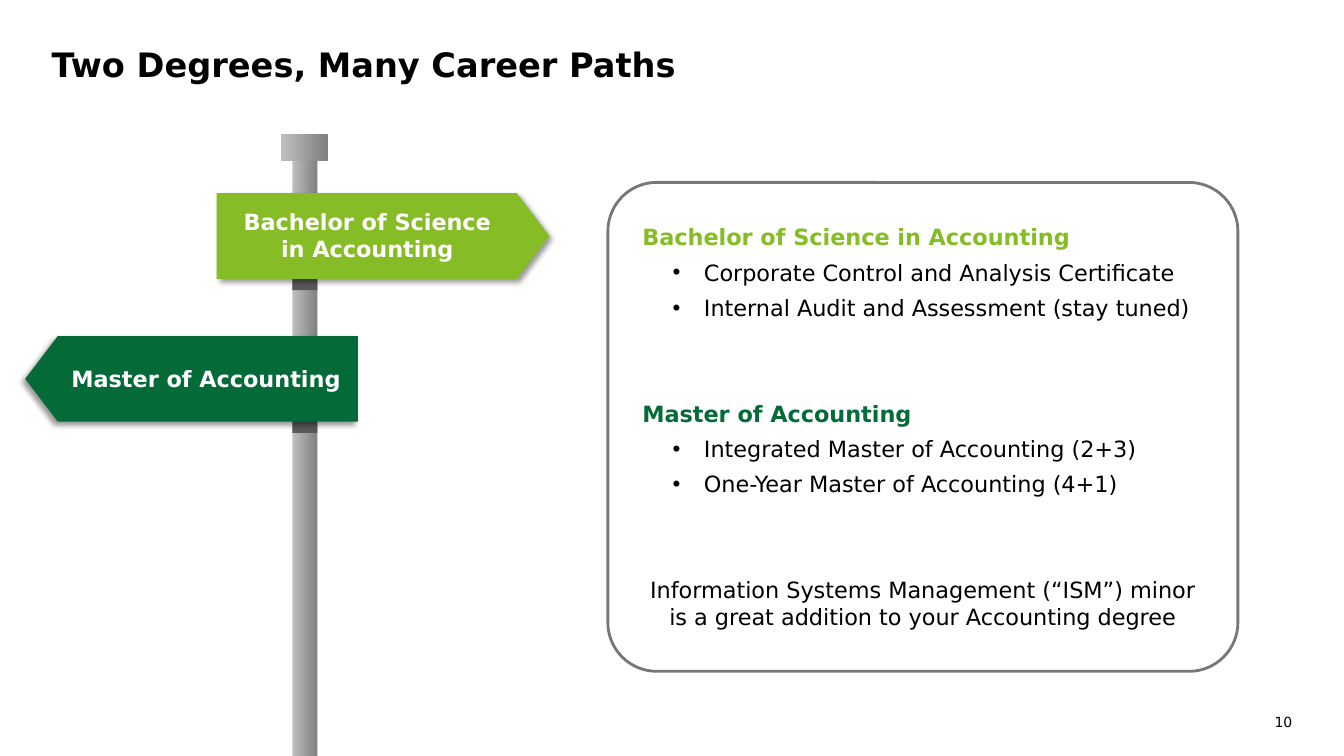
from lxml import etree
from pptx import Presentation
from pptx.dml.color import RGBColor
from pptx.enum import shapes, text
from pptx.oxml import ns
from pptx.util import Pt

FONT = "DejaVu Sans"
BLACK = RGBColor(0x00, 0x00, 0x00)
WHITE = RGBColor(0xFF, 0xFF, 0xFF)
LIME = RGBColor(0x86, 0xBC, 0x25)
GREEN = RGBColor(0x04, 0x6A, 0x38)
SILVER = RGBColor(0xBF, 0xBF, 0xBF)
STEEL = RGBColor(0x80, 0x80, 0x80)
DARK = RGBColor(0x59, 0x59, 0x59)
FRAME = RGBColor(0x75, 0x78, 0x7B)

KIND = shapes.MSO_SHAPE
ALIGN = text.PP_ALIGN

POST_X, POST_W, POST_TOP = 208.8, 18, 95.8
SIGN_W, SIGN_H = 237.6, 61.2
PAGE_H = 540

# Degree, colour, programmes
DEGREES = [
    ("Bachelor of Science in Accounting", LIME,
     ["Corporate Control and Analysis Certificate",
      "Internal Audit and Assessment (stay tuned)"]),
    ("Master of Accounting", GREEN,
     ["Integrated Master of Accounting (2+3)",
      "One-Year Master of Accounting (4+1)"]),
]
MINOR = ("Information Systems Management (“ISM”) minor "
         "is a great addition to your Accounting degree")


def style(para, size, color=BLACK, bold=False, align=ALIGN.LEFT):
    para.alignment = align
    font = para.font
    font.name, font.size, font.bold = FONT, Pt(size), bold
    font.color.rgb = color


def add_label(tree, words, box, size, color=BLACK, bold=False,
              align=ALIGN.LEFT):
    frame = tree.add_textbox(*map(Pt, box)).text_frame
    frame.word_wrap = True
    frame.margin_left = frame.margin_right = 0
    frame.margin_top = frame.margin_bottom = 0
    frame.text = words
    style(frame.paragraphs[0], size, color, bold, align)


def add_solid(tree, kind, box, color):
    shape = tree.add_shape(kind, *map(Pt, box))
    shape.shadow.inherit = False
    shape.fill.solid()
    shape.fill.fore_color.rgb = color
    shape.line.fill.background()
    return shape


def add_metal(tree, box):
    fill = add_solid(tree, KIND.RECTANGLE, box, STEEL).fill
    fill.gradient()
    fill.gradient_angle = 0
    for stop, color in zip(fill.gradient_stops, (SILVER, STEEL)):
        stop.color.rgb = color


def add_shadow(shape, angle):
    effects = shape._element.spPr.find(ns.qn("a:effectLst"))
    outer = etree.SubElement(
        effects, ns.qn("a:outerShdw"), blurRad=str(Pt(4)), dist=str(Pt(3)),
        dir=str(angle * 60000), algn="ctr", rotWithShape="0")
    tint = etree.SubElement(outer, ns.qn("a:srgbClr"), val="000000")
    etree.SubElement(tint, ns.qn("a:alpha"), val="40000")


def add_sign(tree, left, top, color, turn, angle):
    # Clamp just below the sign
    add_solid(tree, KIND.RECTANGLE, (POST_X, top + 60, POST_W, 9.2), DARK)
    sign = add_solid(tree, KIND.PENTAGON, (left, top, SIGN_W, SIGN_H), color)
    sign.adjustments[0] = 0.38
    sign.rotation = turn
    add_shadow(sign, angle)


def add_post(slide):
    tree = slide.shapes.add_group_shape().shapes
    # Pole and cap
    add_metal(tree, (POST_X, POST_TOP, POST_W, PAGE_H - POST_TOP))
    add_metal(tree, (200.9, POST_TOP, 33.2, 19.2))
    # Signs and their labels
    add_sign(tree, 154.8, 138, LIME, 0, 45)
    add_sign(tree, 18, 240, GREEN, 180, 135)
    boxes = [(163.4, 149, 198, 38.8), (48.2, 260.8, 198, 19.4)]
    for (name, _, _), box in zip(DEGREES, boxes):
        add_label(tree, name, box, 16, WHITE, True, ALIGN.CENTER)


def add_bullet(para):
    props = para._p.get_or_add_pPr()
    props.set("marL", str(Pt(44)))
    props.set("indent", str(Pt(-22.3)))
    etree.SubElement(props, ns.qn("a:buFont"), typeface="Arial")
    etree.SubElement(props, ns.qn("a:buChar"), char="•")


def add_line(frame, words, gap=0):
    first = frame.paragraphs[0]
    para = frame.add_paragraph() if first.runs else first
    para.text = words
    para.space_before, para.space_after = Pt(gap), Pt(6)
    return para


def add_panel(slide):
    panel = add_solid(slide.shapes, KIND.ROUNDED_RECTANGLE,
                      (434.2, 130.3, 450, 349.2), WHITE)
    panel.adjustments[0] = 0.1
    panel.line.color.rgb = FRAME
    panel.line.width = Pt(2)
    frame = panel.text_frame
    frame.word_wrap = True
    frame.vertical_anchor = text.MSO_ANCHOR.MIDDLE
    frame.margin_left = frame.margin_right = Pt(14.4)
    frame.margin_top = frame.margin_bottom = Pt(7.2)
    gap = 0
    for name, color, items in DEGREES:
        style(add_line(frame, name, gap), 16, color, True)
        for item in items:
            para = add_line(frame, item)
            add_bullet(para)
            style(para, 16)
        gap = 50.5
    style(add_line(frame, MINOR, gap), 16, align=ALIGN.CENTER)


def main():
    deck = Presentation()
    deck.slide_width, deck.slide_height = Pt(960), Pt(PAGE_H)
    slide = deck.slides.add_slide(deck.slide_layouts[6])
    # Page number and title
    add_label(slide.shapes, "10", (898.6, 509.8, 24.5, 12.2), 10,
              align=ALIGN.RIGHT)
    add_label(slide.shapes, "Two Degrees, Many Career Paths",
              (36.9, 31.7, 886, 34.6), 24, bold=True)
    # Signpost and programme panel
    add_post(slide)
    add_panel(slide)
    deck.save("out.pptx")


if __name__ == "__main__":
    main()
